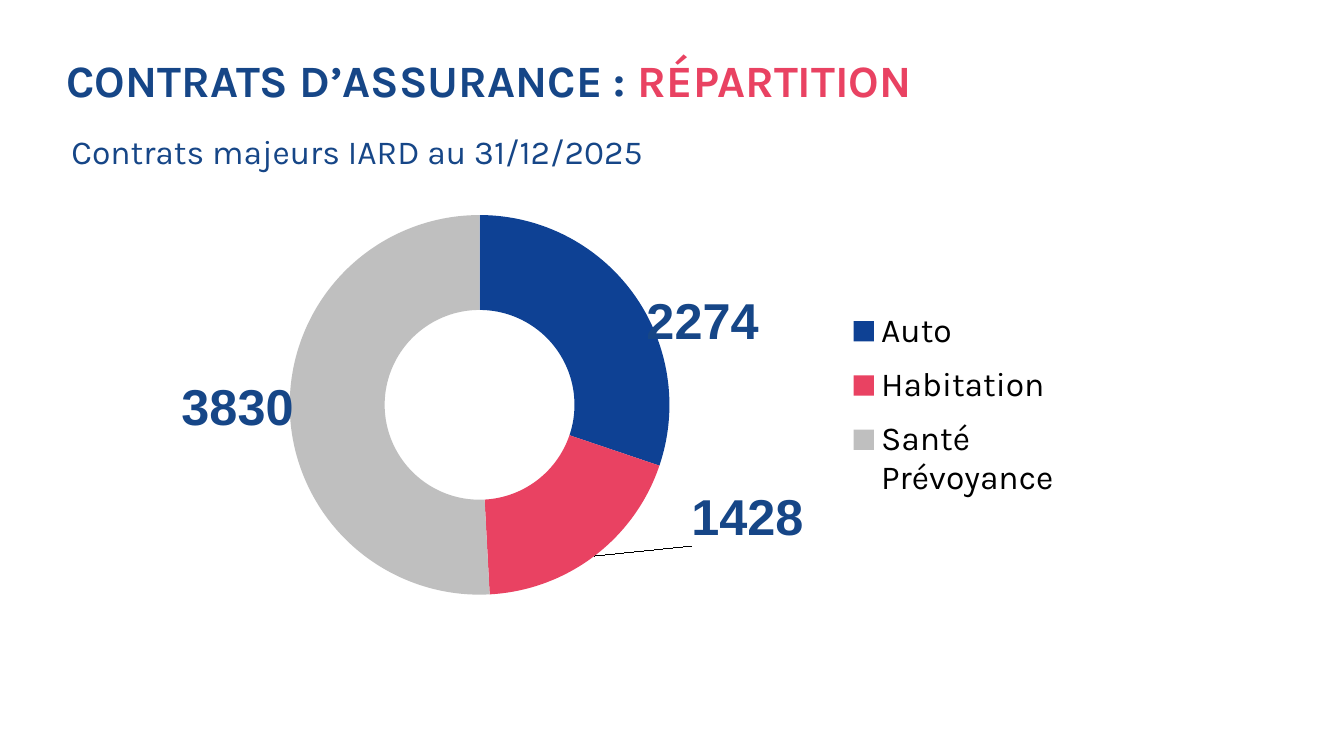
"""Build the slide showing how the insurance contracts are split."""
from lxml import etree
from pptx import Presentation
from pptx.chart.data import CategoryChartData
from pptx.dml.color import RGBColor
from pptx.enum.chart import XL_CHART_TYPE, XL_LEGEND_POSITION
from pptx.enum.text import MSO_ANCHOR
from pptx.oxml.ns import qn
from pptx.util import Inches, Pt

DOUGHNUT = XL_CHART_TYPE.DOUGHNUT
RIGHT = XL_LEGEND_POSITION.RIGHT
MIDDLE = MSO_ANCHOR.MIDDLE

NAVY = RGBColor(0x16, 0x46, 0x87)
BLUE = RGBColor(0x0E, 0x41, 0x94)
PINK = RGBColor(0xE9, 0x42, 0x62)
GREY = RGBColor(0xBF, 0xBF, 0xBF)
BLACK = RGBColor(0x00, 0x00, 0x00)

WIDTH, HEIGHT = 13.33, 7.5
TITLE = [("CONTRATS D’ASSURANCE : ", NAVY), ("RÉPARTITION", PINK)]
SUBTITLE = [("Contrats majeurs IARD au 31/12/2025", NAVY)]
TITLE_BOX = (0.56, 0.52, 11.95, 0.61)
SUBTITLE_BOX = (0.61, 1.25, 12.72, 0.5)
CHART_BOX = (-1.81, 1.89, 12.52, 4.78)
HOLE_SIZE = 75

CONTRACTS = [
    ("Auto", 2274, BLUE, 0.085),
    ("Habitation", 1428, PINK, 0.144),
    ("Santé Prévoyance", 3830, GREY, -0.079),
]

TITLE_FONT = {"name": "Karla", "size": Pt(32), "bold": True}
SUBTITLE_FONT = {"name": "Karla", "size": Pt(24), "bold": False}
LEGEND_FONT = {"name": "Karla", "size": Pt(24), "bold": False}
LABEL_FONT = {"name": "Arial", "size": Pt(36), "bold": True}

PLOT_LAYOUT = {"layoutTarget": "inner", "xMode": "edge", "yMode": "edge",
               "x": 0.23, "y": 0.051, "w": 0.589, "h": 0.788}
LEGEND_LAYOUT = {"xMode": "edge", "yMode": "edge",
                 "x": 0.81, "y": 0.22, "w": 0.18, "h": 0.45}


def format_font(font, values, color):
    for name, value in values.items():
        setattr(font, name, value)
    font.color.rgb = color


def add_text(slide, box, runs, values):
    shape = slide.shapes.add_textbox(*map(Inches, box))
    frame = shape.text_frame
    frame.word_wrap = True
    frame.vertical_anchor = MIDDLE
    paragraph = frame.paragraphs[0]
    for text, color in runs:
        run = paragraph.add_run()
        run.text = text
        format_font(run.font, values, color)
    return paragraph


def set_layout(parent, values, position):
    for previous in parent.findall(qn("c:layout")):
        parent.remove(previous)
    layout = etree.Element(qn("c:layout"))
    manual = etree.SubElement(layout, qn("c:manualLayout"))
    for name, value in values.items():
        etree.SubElement(manual, qn("c:" + name)).set("val", str(value))
    parent.insert(position, layout)


def add_contract_chart(slide):
    data = CategoryChartData()
    data.categories = [name for name, *_ in CONTRACTS]
    data.add_series("Series 1", [count for _, count, *_ in CONTRACTS])
    chart = slide.shapes.add_chart(DOUGHNUT, *map(Inches, CHART_BOX), data).chart
    chart.has_title = False
    format_font(chart.font, {"name": "Karla", "size": Pt(10)}, BLACK)

    chart.has_legend = True
    legend = chart.legend
    legend.position = RIGHT
    legend.include_in_layout = False
    format_font(legend.font, LEGEND_FONT, BLACK)
    set_layout(legend._element, LEGEND_LAYOUT, 1)

    plot = chart.plots[0]
    plot.vary_by_categories = True
    plot._element.find(qn("c:holeSize")).set("val", str(HOLE_SIZE))
    set_layout(plot._element.getparent(), PLOT_LAYOUT, 0)

    series = plot.series[0]
    labels = series.data_labels
    labels.show_value = True
    format_font(labels.font, LABEL_FONT, NAVY)
    for index, (_, _, color, shift) in enumerate(CONTRACTS):
        point = series.points[index]
        point.format.fill.solid()
        point.format.fill.fore_color.rgb = color
        point.format.line.fill.background()
        format_font(point.data_label.font, LABEL_FONT, NAVY)
        label = labels._element.findall(qn("c:dLbl"))[index]
        set_layout(label, {"x": shift, "y": 0}, 1)


def main():
    presentation = Presentation()
    presentation.slide_width = Inches(WIDTH)
    presentation.slide_height = Inches(HEIGHT)
    slide = presentation.slides.add_slide(presentation.slide_layouts[6])
    add_text(slide, SUBTITLE_BOX, SUBTITLE, SUBTITLE_FONT)
    title = add_text(slide, TITLE_BOX, TITLE, TITLE_FONT)
    title.line_spacing = 0.9
    add_contract_chart(slide)
    presentation.save("out.pptx")


if __name__ == "__main__":
    main()
